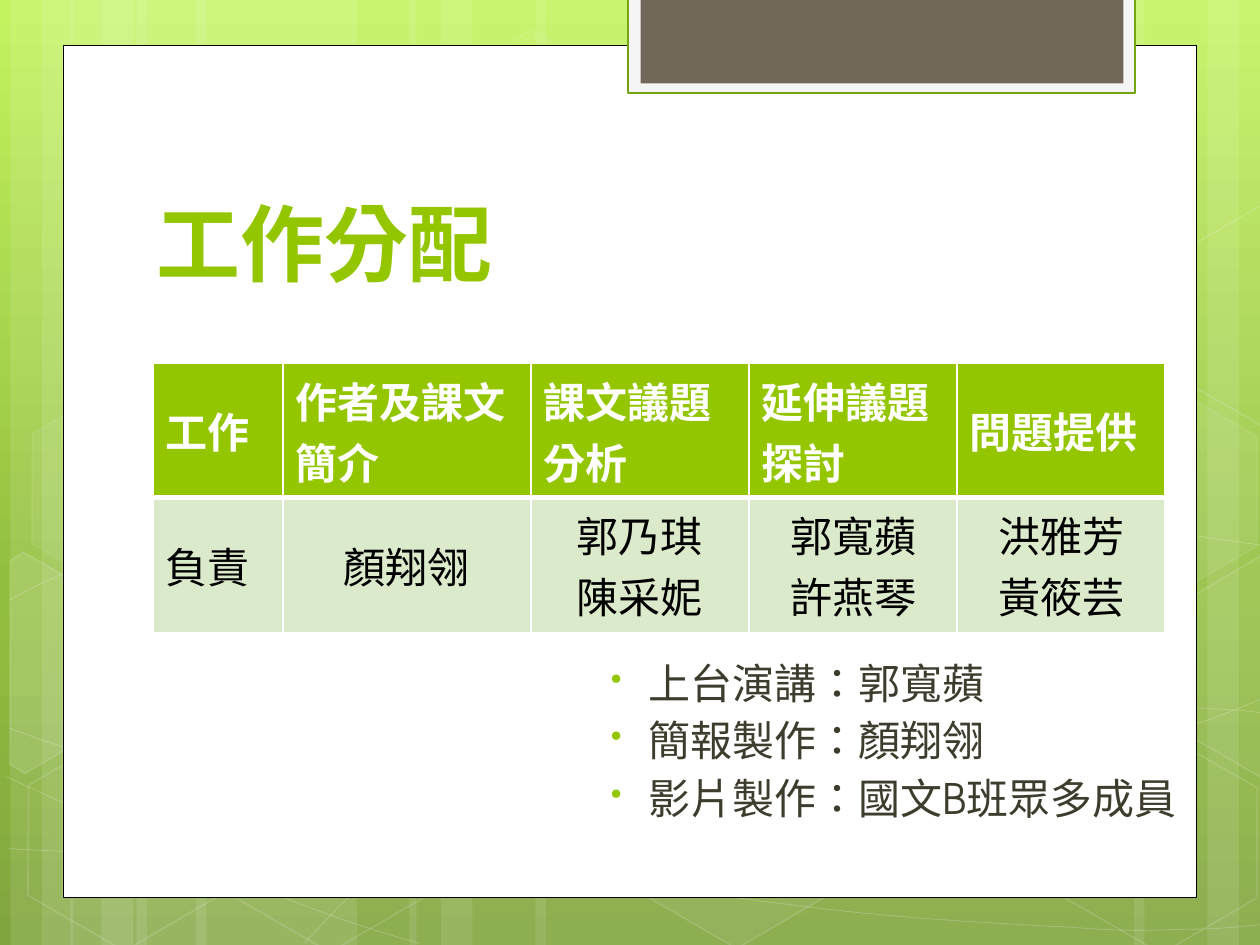
from copy import deepcopy
from math import cos, radians, sin

from lxml import etree
from pptx import Presentation
from pptx.dml.color import RGBColor
from pptx.enum.shapes import MSO_SHAPE
from pptx.enum.text import MSO_ANCHOR, PP_ALIGN
from pptx.oxml.ns import qn
from pptx.util import Pt

RECTANGLE, HEXAGON = MSO_SHAPE.RECTANGLE, MSO_SHAPE.HEXAGON
LEFT, CENTER = PP_ALIGN.LEFT, PP_ALIGN.CENTER
MIDDLE, BOTTOM = MSO_ANCHOR.MIDDLE, MSO_ANCHOR.BOTTOM
TITLE_ONLY = 5

FONT, LANGUAGE = "TeX Gyre Adventor", "zh-TW"
GREEN, PALE_GREEN, WHITE, BLACK = "94C600", "DCEACC", "FFFFFF", "000000"
DARK_TEXT = "3E3D2D"
TILT = 30

BACKGROUND = [(0, "C3F35F"), (0.62, "93BF3F"), (1, "81A53E")]

# Each group of bands: start, direction, width of its widest band
BAND_GROUPS = [(6, 1, 126), (40, 1, 126), (726, -1, 126), (234, 1, 222)]

# Start point, then two control points and an end point per curve
WAVES = [
    [(5, 484.6), (43.9, 486.7), (82.8, 488.9), (136.8, 488.2),
     (190.8, 487.4), (257.8, 486), (329.8, 478.8),
     (401.8, 471.6), (504, 459.4), (570.2, 444.2),
     (635.8, 430.6), (703.4, 409), (725, 396.7)],
    [(5, 343.4), (25.9, 331.9), (46.8, 321.1), (87.1, 310.3),
     (128.2, 299.5), (186.5, 283.7), (249.8, 278.6),
     (313.9, 273.6), (391.7, 272.9), (470.9, 278.6),
     (550.1, 284.4), (681.8, 306.7), (725, 312.5)],
    [(4.3, 444.2), (91.4, 483.8), (177.8, 523.4), (240.5, 539.3)],
    [(5, 416.2), (27.4, 424.1), (50.4, 432), (92.2, 443.5),
     (133.9, 454.3), (196.6, 472.3), (257, 484.6),
     (316.8, 496.8), (392.4, 509.8), (452.2, 517),
     (511.9, 524.9), (576, 527.8), (614.2, 529.9),
     (651.6, 532.8), (661.7, 531.4), (680.4, 531.4),
     (699.1, 530.6), (712.1, 529.2), (725, 528.5)],
    [(174.2, 539.3), (187.2, 524.9), (200.2, 510.5), (217.4, 497.5),
     (234.7, 484.6), (259.2, 470.2), (279.4, 460.1),
     (299.5, 450), (311.8, 445.7), (338.4, 438.5),
     (364.3, 431.3), (412.6, 421.2), (437.8, 416.2),
     (463.7, 411.1), (467.3, 411.1), (489.6, 409.7),
     (511.9, 407.5), (547.2, 405.4), (571.7, 404.6),
     (596.9, 403.9), (637.9, 404.6), (637.9, 404.6),
     (654, 404.6), (670, 404.6), (686.2, 404.6),
     (699.1, 405.4), (711.4, 406.1), (717.8, 406.8),
     (724.3, 407.5), (722.2, 406.8), (724.3, 407.5)],
]

# Left, top, fill opacity (None for no fill), line opacity
HEXAGONS = [
    (240.5, 25.9, 4, 8), (357.8, 424.1, 6, 12), (7.9, 425.5, None, 12),
    (10.1, 224.6, 7, 8), (125.3, 426.2, None, 12), (542.2, 326.2, 10, 12),
    (600.5, 427, None, 12), (600.5, 226.1, 7, 8),
]
# Corners as they stand on the slide, relative to the centre of rotation
LEFT_CUT = [(-20.1, -64.8), (-12.2, -69.8), (43.2, -38.2),
            (42.5, 25.2), (-11.5, 56.9), (-20.1, 51.8)]
RIGHT_CUT = [(-42.5, -25.2), (11.5, -56.9), (17.3, -53.3),
             (17.3, 67), (12.2, 69.8), (-42.5, 38.2)]
# Centre, corners, fill opacity
CUT_HEXAGONS = [((25.9, 385.2), LEFT_CUT, 10), ((709.2, 374.4), RIGHT_CUT, 4),
                ((709.2, 173.9), RIGHT_CUT, None)]

COLUMN_WIDTHS = [74, 141.8, 124.6, 119, 118.8]
ROW_HEIGHT = 76
TABLE_ROWS = [
    ["工作", "作者及課文簡介", "課文議題分析", "延伸議題探討", "問題提供"],
    ["負責", "顏翔翎", "郭乃琪\n陳采妮", "郭寬蘋\n許燕琴", "洪雅芳\n黃筱芸"],
]
DUTIES = "上台演講：郭寬蘋\n簡報製作：顏翔翎\n影片製作：國文B班眾多成員"


def rgb(value):
    return RGBColor.from_string(value)


def paint(fill, color, opacity=100):
    """Fill with a colour, or clear the fill when color is None."""
    if color is None:
        fill.background()
        return
    fill.solid()
    fill.fore_color.rgb = rgb(color)
    if opacity < 100:
        color_element = fill._xPr.find(f"{qn('a:solidFill')}/{qn('a:srgbClr')}")
        etree.SubElement(color_element, qn("a:alpha"), val=str(opacity * 1000))


def write(frame, text, size=24, color=BLACK, bold=False, align=LEFT,
          anchor=None, bullet=None, space_before=None):
    """Write one paragraph per line of text."""
    frame.word_wrap = True
    if anchor is not None:
        frame.vertical_anchor = anchor
    for index, line in enumerate(text.split("\n")):
        paragraph = frame.add_paragraph() if index else frame.paragraphs[0]
        paragraph.alignment = align
        if space_before is not None:
            paragraph.space_before = Pt(space_before)
        run = paragraph.add_run()
        run.text = line
        run.font.name, run.font.size, run.font.bold = FONT, Pt(size), bold
        run.font.color.rgb = rgb(color)
        run._r.get_or_add_rPr().set("lang", "en-US")
        run._r.get_or_add_rPr().set("altLang", LANGUAGE)
        run._r.get_or_add_rPr().set("lang", LANGUAGE)
        if bullet:
            add_bullet(paragraph, bullet)


def add_bullet(paragraph, color):
    properties = paragraph._p.get_or_add_pPr()
    properties.set("marL", str(Pt(27.4)))
    properties.set("indent", str(-Pt(21.6)))
    bullet_color = etree.SubElement(properties, qn("a:buClr"))
    etree.SubElement(bullet_color, qn("a:srgbClr"), val=color)
    etree.SubElement(properties, qn("a:buSzPct"), val="76000")
    etree.SubElement(properties, qn("a:buChar"), char="•")


def set_borders(cell, **widths):
    """Set white borders; the keywords are L, R, T and B."""
    properties = cell._tc.get_or_add_tcPr()
    for index, side in enumerate("LRTB"):
        line = etree.Element(qn(f"a:ln{side}"), w=str(Pt(widths.get(side, 1))))
        solid = etree.SubElement(line, qn("a:solidFill"))
        etree.SubElement(solid, qn("a:srgbClr"), val=WHITE)
        properties.insert(index, line)


def bend(shape):
    """Turn every three straight segments into one cubic curve."""
    segments = list(shape.element.iter(qn("a:lnTo")))
    for first, second, third in zip(*[iter(segments)] * 3):
        curve = etree.Element(qn("a:cubicBezTo"))
        first.addprevious(curve)
        for segment in (first, second, third):
            curve.append(segment[0])
            segment.getparent().remove(segment)


def turn_back(center, corners):
    """Place the corners as they lie before the shape is tilted."""
    cosine, sine = cos(radians(TILT)), sin(radians(TILT))
    return [(center[0] + x * cosine + y * sine, center[1] - x * sine + y * cosine)
            for x, y in corners]


class SlideBuilder:
    def __init__(self, slide):
        self.slide = slide
        self.shapes = slide.shapes

    def background(self, stops):
        fill = self.slide.background.fill
        fill.gradient()
        fill.gradient_angle = 270
        stop_list = self.slide.element.find(f".//{qn('a:gsLst')}")
        stop_list.append(deepcopy(stop_list[-1]))
        for stop, (position, color) in zip(fill.gradient_stops, stops):
            stop.position = position
            stop.color.rgb = rgb(color)

    def style(self, shape, fill, opacity, line, line_width, line_opacity):
        shape.shadow.inherit = False
        paint(shape.fill, fill, opacity)
        paint(shape.line.fill, line, line_opacity)
        if line:
            shape.line.width = Pt(line_width)

    def shape(self, kind, left, top, width, height, fill=None, opacity=100,
              line=None, line_width=1, line_opacity=100):
        shape = self.shapes.add_shape(kind, Pt(left), Pt(top), Pt(width), Pt(height))
        self.style(shape, fill, opacity, line, line_width, line_opacity)
        return shape

    def outline(self, points, close=False, fill=None, opacity=100,
                line_width=1, line_opacity=100):
        builder = self.shapes.build_freeform(*points[0], scale=Pt(1))
        builder.add_line_segments(points[1:], close=close)
        shape = builder.convert_to_shape()
        self.style(shape, fill, opacity, WHITE, line_width, line_opacity)
        return shape

    def title(self, text, left, top, width, height):
        title = self.shapes.title
        title.element.getparent().append(title.element)  # bring to front
        title.left, title.top, title.width, title.height = map(Pt, (left, top, width, height))
        write(title.text_frame, text, size=48, color=GREEN, bold=True, anchor=BOTTOM)

    def table(self, rows, left, top):
        table = self.shapes.add_table(len(rows), len(COLUMN_WIDTHS), Pt(left), Pt(top),
                                      Pt(sum(COLUMN_WIDTHS)), Pt(ROW_HEIGHT * len(rows))).table
        for column, width in zip(table.columns, COLUMN_WIDTHS):
            column.width = Pt(width)
        for row_index, texts in enumerate(rows):
            header = row_index == 0
            table.rows[row_index].height = Pt(ROW_HEIGHT)
            for column_index, text in enumerate(texts):
                cell = table.cell(row_index, column_index)
                cell.vertical_anchor = MIDDLE
                paint(cell.fill, GREEN if header else PALE_GREEN)
                set_borders(cell, **({"B": 3} if header else {"T": 3}))
                write(cell.text_frame, text, color=WHITE if header else BLACK, bold=header,
                      align=LEFT if header or column_index == 0 else CENTER)

    def text(self, text, left, top, width, height, **text_format):
        box = self.shapes.add_textbox(Pt(left), Pt(top), Pt(width), Pt(height))
        write(box.text_frame, text, **text_format)


def main():
    presentation = Presentation()
    presentation.slide_width, presentation.slide_height = Pt(720), Pt(540)
    builder = SlideBuilder(presentation.slides.add_slide(presentation.slide_layouts[TITLE_ONLY]))

    builder.background(BACKGROUND)
    for start, direction, widest in BAND_GROUPS:
        for offset, width in ((72, widest), (0, 36), (18, 60)):
            left = start + offset if direction > 0 else start - offset - width
            builder.shape(RECTANGLE, left, 0, width, 540, fill=WHITE, opacity=10)
    for wave in WAVES:
        bend(builder.outline(wave, line_width=0.5, line_opacity=20))
    for left, top, opacity, line_opacity in HEXAGONS:
        hexagon = builder.shape(HEXAGON, left, top, 126, 109.4, fill=WHITE if opacity else None,
                                opacity=opacity, line=WHITE, line_opacity=line_opacity)
        hexagon.adjustments[0] = 0.285
        hexagon.rotation = TILT
    for center, corners, opacity in CUT_HEXAGONS:
        builder.outline(turn_back(center, corners), close=True, fill=WHITE if opacity else None,
                        opacity=opacity, line_opacity=12).rotation = TILT

    builder.shape(RECTANGLE, 36, 26, 648, 487, fill=WHITE, line=BLACK, line_width=0.5)
    builder.shape(RECTANGLE, 359, -1.4, 289.6, 54.7, fill="F5F5F5", line="74A510", line_width=1.25)
    builder.shape(RECTANGLE, 366, -1.4, 276, 49, fill="71685A")

    builder.title("工作分配", 82, 80.6, 553, 90)
    builder.table(TABLE_ROWS, 87.6, 207.6)
    builder.text(DUTIES, 336.2, 372.2, 345.6, 108, color=DARK_TEXT, bullet=GREEN, space_before=4)
    presentation.save("out.pptx")


if __name__ == "__main__":
    main()
